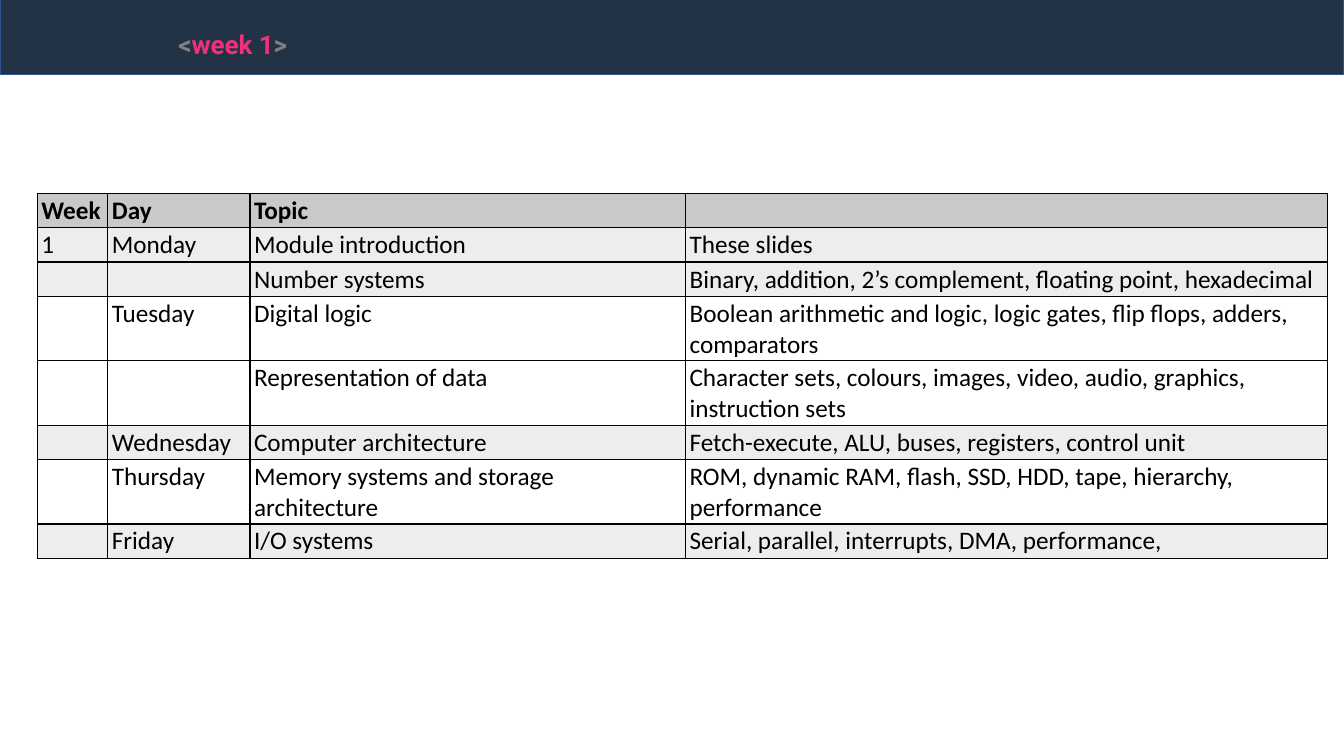
"""Build the week 1 timetable slide."""
from dataclasses import dataclass

from lxml.etree import SubElement
from pptx import Presentation
from pptx.dml.color import RGBColor as Color
from pptx.enum.shapes import MSO_SHAPE as Shape
from pptx.enum.text import MSO_ANCHOR as Anchor, MSO_AUTO_SIZE as AutoSize, PP_ALIGN as Align
from pptx.oxml.ns import qn
from pptx.util import Inches, Pt


@dataclass(frozen=True)
class Theme:
    bar: str = "223346"
    bar_line: str = "325491"
    bracket: str = "808080"
    accent: str = "F1307C"
    ink: str = "000000"
    header: str = "C9C9C9"
    band: str = "EDEDED"
    title_font: str = "Roboto"
    body_font: str = "Calibri"
    title_size: int = 32
    body_size: int = 18


THEME = Theme()
TITLE = [("<", THEME.bracket), ("week 1", THEME.accent), (">", THEME.bracket)]
SINGLE, DOUBLE = 0.34, 0.64
COLUMNS = [0.7, 1.41, 4.32, 6.37]
ROWS = [
    (SINGLE, THEME.header, ("Week", "Day", "Topic", "")),
    (SINGLE, THEME.band, ("1", "Monday", "Module introduction", "These slides")),
    (SINGLE, THEME.band, ("", "", "Number systems",
                          "Binary, addition, 2’s complement, floating point, hexadecimal")),
    (DOUBLE, None, ("", "Tuesday", "Digital logic",
                    "Boolean arithmetic and logic, logic gates, flip flops, adders, comparators")),
    (DOUBLE, None, ("", "", "Representation of data",
                    "Character sets, colours, images, video, audio, graphics, instruction sets")),
    (SINGLE, THEME.band, ("", "Wednesday", "Computer architecture",
                          "Fetch-execute, ALU, buses, registers, control unit")),
    (DOUBLE, None, ("", "Thursday", "Memory systems and storage architecture",
                    "ROM, dynamic RAM, flash, SSD, HDD, tape, hierarchy, performance")),
    (SINGLE, THEME.band, ("", "Friday", "I/O systems",
                          "Serial, parallel, interrupts, DMA, performance,")),
]


def style_font(font, name, size, bold):
    font.name, font.size, font.bold = name, Pt(size), bold


def add_bar(slide, width):
    bar = slide.shapes.add_shape(Shape.RECTANGLE, 0, Inches(-0.04), width, Inches(0.78))
    bar.shadow.inherit = False
    bar.fill.solid()
    bar.fill.fore_color.rgb = Color.from_string(THEME.bar)
    bar.line.color.rgb = Color.from_string(THEME.bar_line)
    bar.line.width = Pt(1)
    slide.shapes._spTree.insert(2, bar._element)


def fill_title(title):
    title.left, title.top = Inches(1.67), Inches(0.18)
    title.width, title.height = Inches(1.39), Inches(0.64)
    frame = title.text_frame
    frame.word_wrap = False
    frame.auto_size = AutoSize.SHAPE_TO_FIT_TEXT
    frame.vertical_anchor = Anchor.TOP
    paragraph = frame.paragraphs[0]
    paragraph.alignment = Align.LEFT
    style_font(paragraph.font, THEME.title_font, THEME.title_size, True)
    for text, color in TITLE:
        run = paragraph.add_run()
        run.text = text
        style_font(run.font, THEME.title_font, THEME.title_size, True)
        run.font.color.rgb = Color.from_string(color)
        run._r.get_or_add_rPr().set("baseline", "30000")


def add_borders(cell):
    properties = cell._tc.get_or_add_tcPr()
    for side in ("a:lnL", "a:lnR", "a:lnT", "a:lnB"):
        line = SubElement(properties, qn(side), w=str(Pt(1)))
        SubElement(SubElement(line, qn("a:solidFill")), qn("a:srgbClr"), val=THEME.ink)


def fill_cell(cell, text, fill, bold):
    cell.margin_left = cell.margin_right = Inches(0.04)
    cell.margin_top = cell.margin_bottom = Inches(0.02)
    add_borders(cell)
    if fill:
        cell.fill.solid()
        cell.fill.fore_color.rgb = Color.from_string(fill)
    else:
        cell.fill.background()
    cell.text = text
    paragraph = cell.text_frame.paragraphs[0]
    style_font(paragraph.font, THEME.body_font, THEME.body_size, bold)
    paragraph.font.color.rgb = Color.from_string(THEME.ink)


def add_timetable(slide):
    height = sum(row[0] for row in ROWS)
    table = slide.shapes.add_table(len(ROWS), len(COLUMNS), Inches(0.37), Inches(1.92),
                                   Inches(sum(COLUMNS)), Inches(height)).table
    table.first_row = table.horz_banding = False
    for column, width in zip(table.columns, COLUMNS):
        column.width = Inches(width)
    for index, (row, (height, fill, texts)) in enumerate(zip(table.rows, ROWS)):
        row.height = Inches(height)
        for cell, text in zip(row.cells, texts):
            fill_cell(cell, text, fill, index == 0)


def main():
    presentation = Presentation()
    presentation.slide_width, presentation.slide_height = Inches(13.33), Inches(7.5)
    slide = presentation.slides.add_slide(presentation.slide_layouts[5])
    add_bar(slide, presentation.slide_width)
    fill_title(slide.shapes.title)
    add_timetable(slide)
    presentation.save("out.pptx")


if __name__ == "__main__":
    main()
